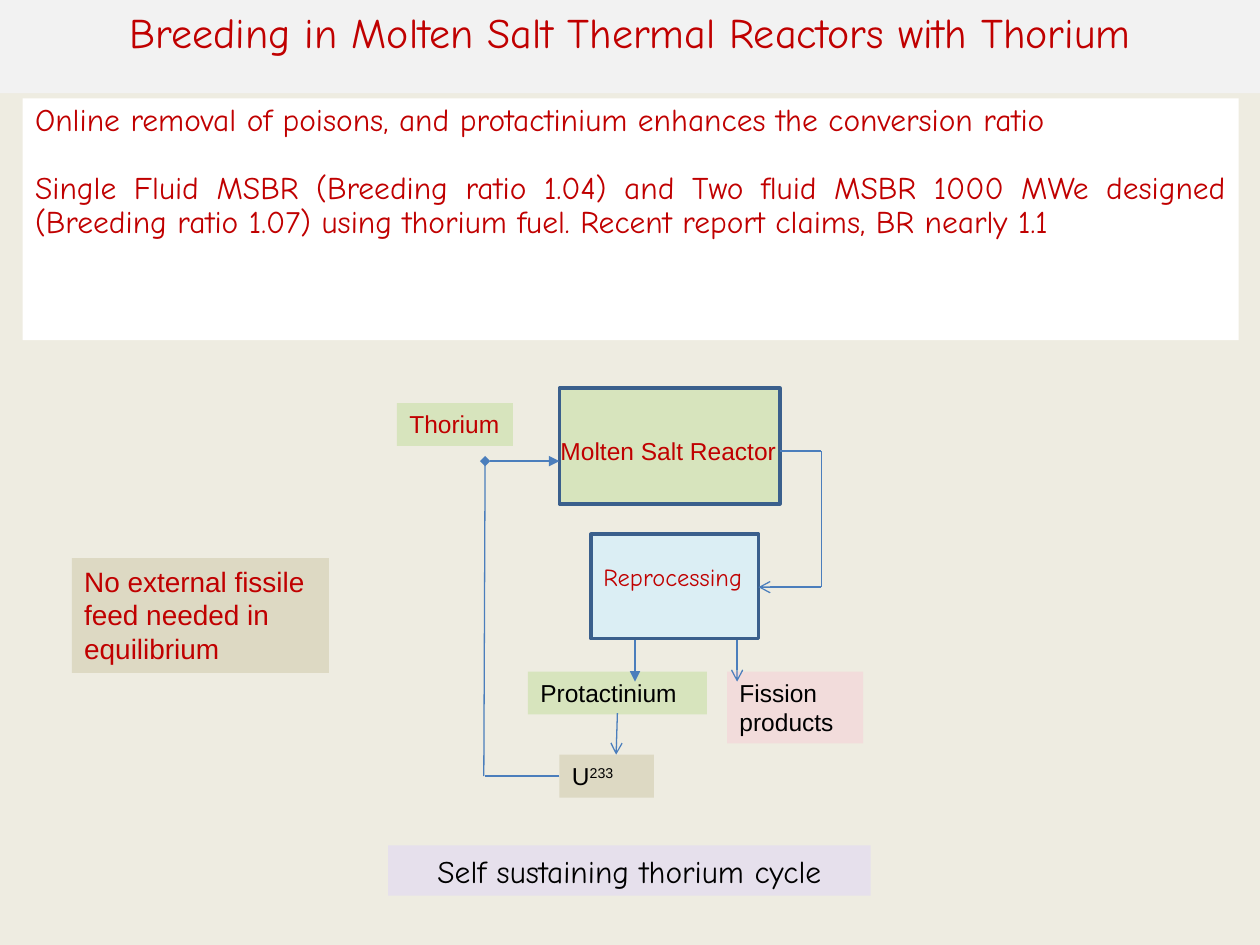
import pptx
import pptx.dml.color
import pptx.enum.shapes
import pptx.enum.text
import pptx.oxml.ns
import pptx.util
from lxml import etree

Inches = pptx.util.Inches
Pt = pptx.util.Pt
ALIGN = pptx.enum.text.PP_ALIGN

COLORS = {
    "background": "EEECE1",
    "white": "FFFFFF",
    "banner": "F2F2F2",
    "tan": "DDD9C3",
    "lavender": "E6E0EC",
    "green": "D7E4BD",
    "blue": "DBEEF4",
    "pink": "F2DCDB",
    "border": "3A5F8C",
    "flow": "4B7EBC",
    "red": "C00000",
    "black": "000000",
}
ARIAL = "Arial"
COMIC = "Comic Neue"


def rgb(name):
    return pptx.dml.color.RGBColor.from_string(COLORS[name])


def add_run(paragraph, text, size, font, color):
    run = paragraph.add_run()
    run.text = text
    run.font.size = Pt(size)
    run.font.name = font
    run.font.color.rgb = rgb(color)
    return run


def add_label(slide, box, paragraphs, size, font, color, fill=None, align=ALIGN.LEFT):
    label = slide.shapes.add_textbox(*map(Inches, box))
    if fill:
        label.fill.solid()
        label.fill.fore_color.rgb = rgb(fill)
    frame = label.text_frame
    frame.word_wrap = True
    for index, text in enumerate(paragraphs):
        paragraph = frame.add_paragraph() if index else frame.paragraphs[0]
        paragraph.alignment = align
        add_run(paragraph, text, size, font, color)
    return frame


def add_unit(slide, box, fill):
    unit = slide.shapes.add_shape(pptx.enum.shapes.MSO_SHAPE.RECTANGLE, *map(Inches, box))
    unit.shadow.inherit = False
    unit.fill.solid()
    unit.fill.fore_color.rgb = rgb(fill)
    unit.line.color.rgb = rgb("border")
    unit.line.width = Pt(2)


def add_flow(slide, start, end, head=None, tail=None):
    flow = slide.shapes.add_connector(
        pptx.enum.shapes.MSO_CONNECTOR.STRAIGHT, *map(Inches, start + end))
    flow.line.color.rgb = rgb("flow")
    flow.line.width = Pt(0.75)
    line = flow.line._get_or_add_ln()
    for tag, kind in (("a:headEnd", head), ("a:tailEnd", tail)):
        if kind:
            etree.SubElement(line, pptx.oxml.ns.qn(tag), type=kind)
    etree.SubElement(flow._element.spPr, pptx.oxml.ns.qn("a:effectLst"))


def add_statements(slide):
    findings = add_label(slide, (0.18, 0.78, 9.65, 1.92), [
        "Online removal of poisons, and protactinium enhances the conversion ratio",
        "Single Fluid MSBR (Breeding ratio 1.04) and Two fluid MSBR 1000 MWe designed "
        "(Breeding ratio 1.07) using thorium fuel. Recent report claims, BR nearly 1.1",
    ], 18, COMIC, "red", "white", ALIGN.JUSTIFY)
    for paragraph in findings.paragraphs:
        paragraph.line_spacing = 0.9
    findings.paragraphs[0].space_after = Pt(19.3)

    add_label(slide, (0, 0, 10, 0.74),
              ["Breeding in Molten Salt Thermal Reactors with Thorium"],
              24, COMIC, "red", "banner", ALIGN.CENTER)
    add_label(slide, (0.57, 4.43, 2.04, 0.91),
              ["No external fissile feed needed in equilibrium"],
              16, ARIAL, "red", "tan")
    add_label(slide, (3.08, 6.71, 3.83, 0.4), ["Self sustaining thorium cycle"],
              18, COMIC, "black", "lavender", ALIGN.CENTER)


def add_cycle(slide):
    add_unit(slide, (4.44, 3.08, 1.75, 0.92), "green")
    add_unit(slide, (4.69, 4.24, 1.33, 0.83), "blue")

    for box, text, font, color, fill in (
        ((4.35, 3.41, 2, 0.34), "Molten Salt Reactor", ARIAL, "red", None),
        ((4.69, 4.41, 1.42, 0.34), "Reprocessing", COMIC, "red", None),
        ((3.15, 3.2, 0.92, 0.34), "Thorium", ARIAL, "red", "green"),
        ((5.77, 5.33, 1.08, 0.57), "Fission products", ARIAL, "black", "pink"),
        ((4.19, 5.33, 1.42, 0.34), "Protactinium", ARIAL, "black", "green"),
    ):
        add_label(slide, box, [text], 14, font, color, fill)

    uranium = add_label(slide, (4.44, 5.99, 0.75, 0.34), ["U"], 14, ARIAL, "black", "tan")
    mass_number = add_run(uranium.paragraphs[0], "233", 14, ARIAL, "black")
    mass_number.font._element.set("baseline", "30000")

    for start, end, head, tail in (
        ((6.19, 3.58), (6.52, 3.58), None, None),
        ((6.52, 3.58), (6.52, 4.66), None, None),
        ((6.52, 4.66), (6.02, 4.66), None, "arrow"),
        ((5.85, 5.08), (5.85, 5.41), None, "arrow"),
        ((5.04, 5.08), (5.04, 5.41), None, "triangle"),
        ((4.9, 5.66), (4.89, 5.99), None, "arrow"),
        ((4.44, 6.16), (3.85, 6.16), None, None),
        ((3.84, 6.16), (3.85, 3.66), None, None),
        ((3.85, 3.66), (4.44, 3.66), "diamond", "triangle"),
    ):
        add_flow(slide, start, end, head, tail)


def main():
    deck = pptx.Presentation()
    deck.slide_width = Inches(10)
    deck.slide_height = Inches(7.5)
    slide = deck.slides.add_slide(deck.slide_layouts[6])
    slide.background.fill.solid()
    slide.background.fill.fore_color.rgb = rgb("background")
    add_statements(slide)
    add_cycle(slide)
    deck.save("out.pptx")


if __name__ == "__main__":
    main()
